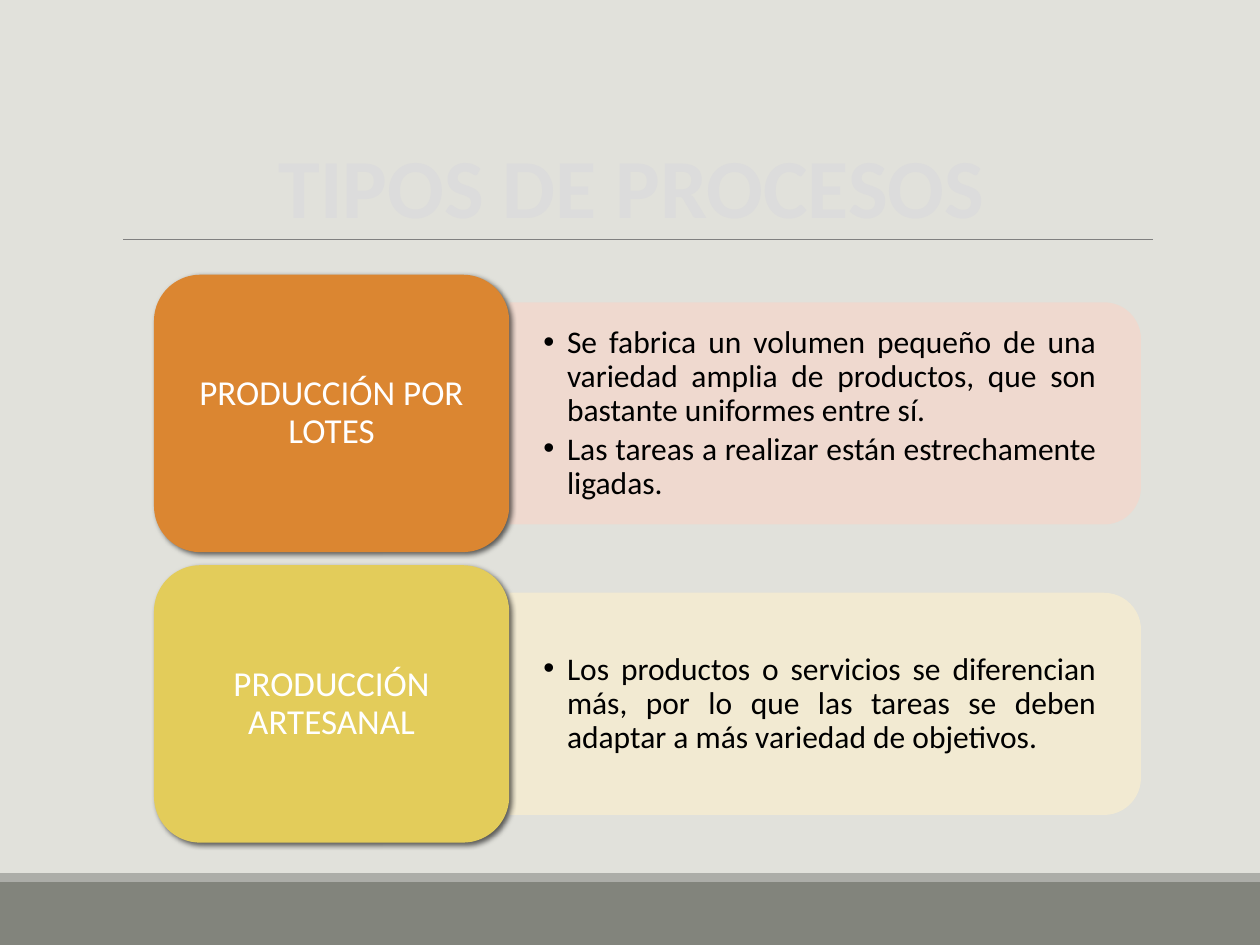
from pptx import Presentation
from pptx import util as u
from pptx.dml.color import RGBColor
from pptx.enum import shapes, text
from pptx.oxml.ns import qn
from lxml import etree

COLORS = {
    "background": "E1E1DB", "band": "82847C", "stripe": "ACADA8",
    "rule": "808080", "title": "DCDCDC", "white": "FFFFFF", "black": "000000",
    "orange": "DB8631", "pink": "F1D9CE", "yellow": "E3CC5A", "cream": "F4ECD2",
}
ROWS = [
    ("PRODUCCIÓN POR LOTES", "orange", "pink", [
        "Se fabrica un volumen pequeño de una variedad amplia de productos, "
        "que son bastante uniformes entre sí.",
        "Las tareas a realizar están estrechamente ligadas."]),
    ("PRODUCCIÓN ARTESANAL", "yellow", "cream", [
        "Los productos o servicios se diferencian más, por lo que las tareas "
        "se deben adaptar a más variedad de objetivos."]),
]
CARD_LEFT, CARD_TOP, CARD_WIDTH, CARD_HEIGHT = 88, 157, 203, 158.5
ROW_PITCH = 166
PANEL_WIDTH, PANEL_HEIGHT = 361, 127
LIST_WIDTH, LIST_HEIGHT = 355, 114.5


class Painter:
    font = "Calibri"

    def __init__(self, page):
        self.page = page
        page.background.fill.solid()
        page.background.fill.fore_color.rgb = self.color("background")

    def color(self, name):
        return RGBColor.from_string(COLORS[name])

    def shape(self, kind, left, top, width, height, fill):
        box = self.page.shapes.add_shape(
            kind, u.Pt(left), u.Pt(top), u.Pt(width), u.Pt(height))
        box.shadow.inherit = False
        box.fill.solid()
        box.fill.fore_color.rgb = self.color(fill)
        box.line.fill.background()
        return box

    def rule(self, left, right, y):
        line = self.page.shapes.add_connector(
            shapes.MSO_CONNECTOR.STRAIGHT, u.Pt(left), u.Pt(y), u.Pt(right), u.Pt(y))
        line.line.color.rgb = self.color("rule")
        line.line.width = u.Pt(0.5)
        etree.SubElement(line._element.spPr, qn("a:effectLst"))

    def style(self, para, size, color, align, spacing=1.0, after=0):
        para.font.name = self.font
        para.font.size = u.Pt(size)
        para.font.color.rgb = self.color(color)
        para.alignment = align
        para.line_spacing = spacing
        para.space_before = u.Pt(0)
        para.space_after = u.Pt(after)

    def frame(self, box, anchor, side, edge):
        frame = box.text_frame
        frame.word_wrap = True
        frame.auto_size = text.MSO_AUTO_SIZE.NONE
        frame.vertical_anchor = anchor
        frame.margin_left = frame.margin_right = u.Pt(side)
        frame.margin_top = frame.margin_bottom = u.Pt(edge)
        return frame

    def place(self, box, left, top, width, height):
        box.left, box.top = u.Pt(left), u.Pt(top)
        box.width, box.height = u.Pt(width), u.Pt(height)

    def title(self, wording, left, top, width, height):
        box = self.page.shapes.title
        self.place(box, left, top, width, height)
        frame = self.frame(box, text.MSO_ANCHOR.BOTTOM, 7.2, 3.6)
        frame.text = wording
        para = frame.paragraphs[0]
        self.style(para, 48, "title", text.PP_ALIGN.CENTER)
        para.font.bold = True

    def panel(self, left, middle, width, height, fill):
        # Turned a quarter, so the rounded top faces right
        box = self.shape(shapes.MSO_SHAPE.ROUND_2_SAME_RECTANGLE,
                         left + (width - height) / 2, middle - width / 2,
                         height, width, fill)
        box.rotation = 90
        tint = box._element.spPr.find(".//" + qn("a:srgbClr"))
        etree.SubElement(tint, qn("a:alpha"), val="90000")

    def card(self, wording, left, top, width, height, fill):
        box = self.shape(shapes.MSO_SHAPE.ROUNDED_RECTANGLE,
                         left, top, width, height, fill)
        effects = box._element.spPr.find(qn("a:effectLst"))
        shadow = etree.SubElement(
            effects, qn("a:outerShdw"), blurRad=str(u.Pt(3)), dist=str(u.Pt(2)),
            dir="2700000", algn="ctr", rotWithShape="0")
        tint = etree.SubElement(shadow, qn("a:srgbClr"), val=COLORS["black"])
        etree.SubElement(tint, qn("a:alpha"), val="60000")
        frame = self.frame(box, text.MSO_ANCHOR.MIDDLE, 6, 3)
        frame.text = wording
        self.style(frame.paragraphs[0], 20, "white", text.PP_ALIGN.CENTER, 0.9)

    def bullets(self, box, items, left, middle, width, height):
        self.place(box, left, middle - height / 2, width, height)
        frame = self.frame(box, text.MSO_ANCHOR.MIDDLE, 19.5, 10)
        frame.text = "\n".join(items)
        for para in frame.paragraphs:
            self.style(para, 18, "black", text.PP_ALIGN.JUSTIFY, 0.9, 2.7)
            props = para._p.get_or_add_pPr()
            props.set("marL", str(u.Pt(13.5)))
            props.set("indent", str(-u.Pt(13.5)))
        # Bring the list in front of its panel
        box._element.getparent().append(box._element)


def main():
    deck = Presentation()
    deck.slide_width, deck.slide_height = u.Pt(720), u.Pt(540)
    page = deck.slides.add_slide(deck.slide_layouts.get_by_name("Two Content"))
    painter = Painter(page)

    # Footer bands, title and rule
    painter.shape(shapes.MSO_SHAPE.RECTANGLE, 0, 504, 720, 36, "band")
    painter.shape(shapes.MSO_SHAPE.RECTANGLE, 0, 499, 720, 5, "stripe")
    painter.title("TIPOS DE PROCESOS", 67, 22, 588, 116)
    painter.rule(70.5, 659, 137)

    # One card, panel and list per process type
    lists = [page.placeholders[1], page.placeholders[2]]
    for index, (name, strong, pale, items) in enumerate(ROWS):
        top = CARD_TOP + index * ROW_PITCH
        middle = top + CARD_HEIGHT / 2
        right = CARD_LEFT + CARD_WIDTH
        painter.panel(right, middle, PANEL_WIDTH, PANEL_HEIGHT, pale)
        painter.bullets(lists[index], items, right, middle, LIST_WIDTH, LIST_HEIGHT)
        painter.card(name, CARD_LEFT, top, CARD_WIDTH, CARD_HEIGHT, strong)

    deck.save("out.pptx")


if __name__ == "__main__":
    main()
